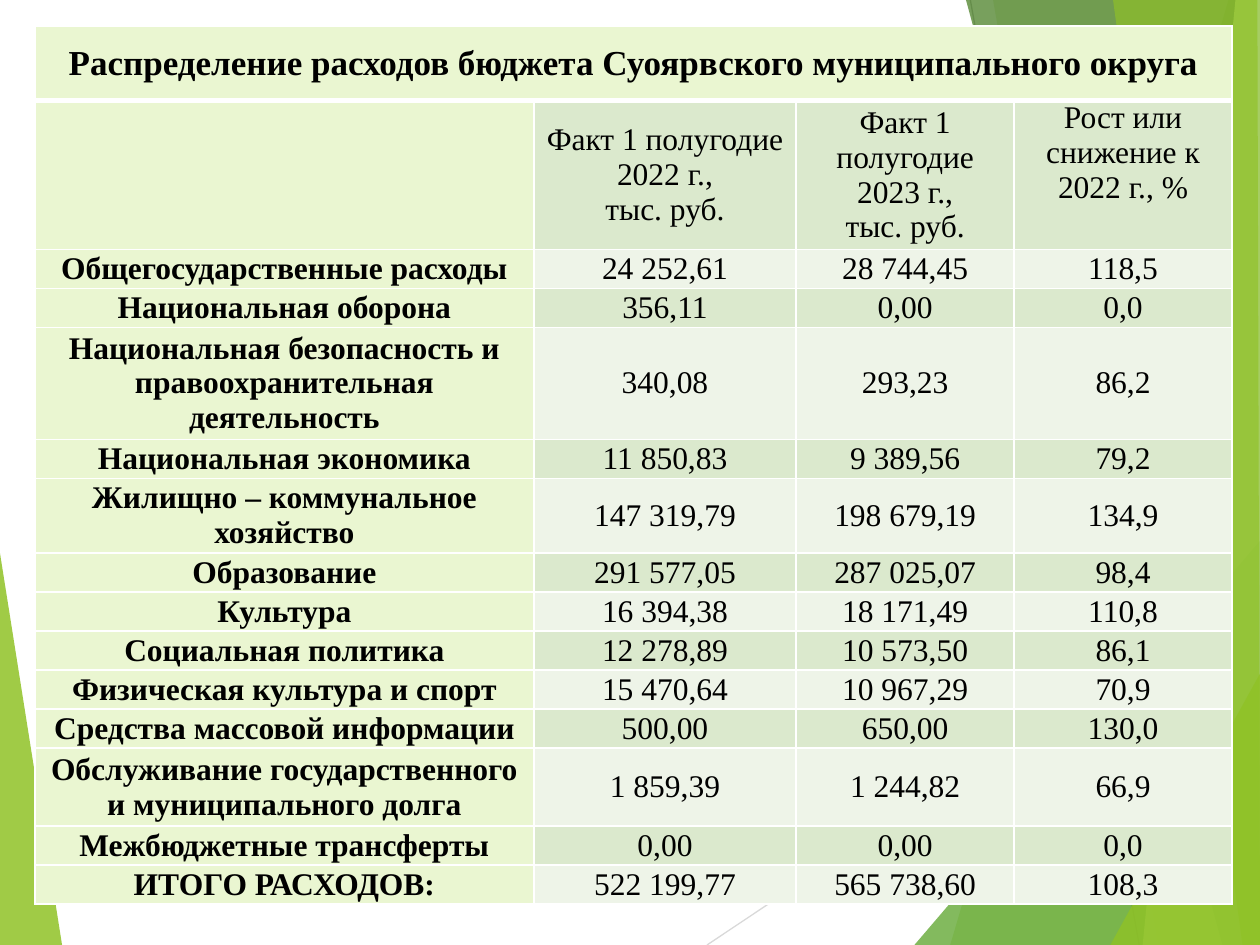
from lxml import etree
from pptx import Presentation
from pptx.dml.color import RGBColor
from pptx.enum.shapes import MSO_CONNECTOR
from pptx.enum.text import MSO_ANCHOR, PP_ALIGN
from pptx.oxml.ns import qn
from pptx.util import Pt

MIDDLE, TOP = MSO_ANCHOR.MIDDLE, MSO_ANCHOR.TOP
CENTER = PP_ALIGN.CENTER
STRAIGHT = MSO_CONNECTOR.STRAIGHT

FONT = "Times New Roman"
BLACK = RGBColor(0x00, 0x00, 0x00)
WHITE = RGBColor(0xFF, 0xFF, 0xFF)
LIME = RGBColor(0x90, 0xC2, 0x26)
GREEN = RGBColor(0x54, 0xA0, 0x21)
DARK_GREEN = RGBColor(0x3F, 0x78, 0x19)
PALE_LIME = RGBColor(0xC0, 0xE4, 0x74)
LIGHT_GRAY = RGBColor(0xD9, 0xD9, 0xD9)
GRAY = RGBColor(0xBF, 0xBF, 0xBF)
LABEL_FILL = RGBColor(0xEA, 0xF6, 0xD1)
BAND_FILLS = (RGBColor(0xDB, 0xE9, 0xCD), RGBColor(0xEE, 0xF4, 0xE8))

WIDTH, HEIGHT = 720, 540

TITLE = "Распределение расходов бюджета Суоярвского муниципального округа"
HEADER = ("", "Факт 1 полугодие 2022 г.,\nтыс. руб.",
          "Факт 1 полугодие 2023 г.,\nтыс. руб.", "Рост или снижение к 2022 г., %")
EXPENSES = [
    ("Общегосударственные расходы", "24 252,61", "28 744,45", "118,5"),
    ("Национальная оборона", "356,11", "0,00", "0,0"),
    ("Национальная безопасность и правоохранительная деятельность",
     "340,08", "293,23", "86,2"),
    ("Национальная экономика", "11 850,83", "9 389,56", "79,2"),
    ("Жилищно – коммунальное хозяйство", "147 319,79", "198 679,19", "134,9"),
    ("Образование", "291 577,05", "287 025,07", "98,4"),
    ("Культура", "16 394,38", "18 171,49", "110,8"),
    ("Социальная политика", "12 278,89", "10 573,50", "86,1"),
    ("Физическая культура и спорт", "15 470,64", "10 967,29", "70,9"),
    ("Средства массовой информации", "500,00", "650,00", "130,0"),
    ("Обслуживание государственного и муниципального долга",
     "1 859,39", "1 244,82", "66,9"),
    ("Межбюджетные трансферты", "0,00", "0,00", "0,0"),
    ("ИТОГО РАСХОДОВ:", "522 199,77", "565 738,60", "108,3"),
]
TABLE_LEFT, TABLE_TOP = 20, 15
COLUMN_WIDTHS = (285, 150, 124.5, 124.5)
TITLE_HEIGHT, HEADER_HEIGHT, LINE_HEIGHT = 42.5, 85, 22.3
TALL_ROWS = {2: 64, 4: 42.8, 10: 44.6}  # expense index: height

# Background, back to front: (start, end, colour) and (corners, colour, opacity %)
LINES = [
    ((404, HEIGHT), (WIDTH, 329), LIGHT_GRAY),
    ((554.5, 0), (651, HEIGHT), GRAY),
]
LEFT_FACET = ([(0, 316), (35.5, HEIGHT), (0, HEIGHT)], LIME, 85)
RIGHT_FACETS = [
    ([(702, 0), (543, HEIGHT), (WIDTH, HEIGHT), (WIDTH, 0)], LIME, 30),
    ([(567.5, 0), (662, HEIGHT), (WIDTH, HEIGHT), (WIDTH, 0)], LIME, 20),
    ([(522.5, HEIGHT), (WIDTH, 309), (WIDTH, HEIGHT)], GREEN, 72),
    ([(552, 0), (698.5, HEIGHT), (WIDTH, HEIGHT), (WIDTH, 0)], DARK_GREEN, 70),
    ([(706, 0), (653, HEIGHT), (WIDTH, HEIGHT), (WIDTH, 0)], PALE_LIME, 70),
    ([(636, 0), (710, HEIGHT), (WIDTH, HEIGHT), (718.5, 0)], LIME, 65),
    ([(634.5, HEIGHT), (WIDTH, 385), (WIDTH, HEIGHT)], LIME, 80),
]


def add_facet(slide, corners, color, opacity):
    points = [(Pt(x), Pt(y)) for x, y in corners]
    builder = slide.shapes.build_freeform(*points[0], scale=1.0)
    builder.add_line_segments(points[1:], close=True)
    facet = builder.convert_to_shape()
    facet.shadow.inherit = False
    facet.line.fill.background()
    facet.fill.solid()
    facet.fill.fore_color.rgb = color
    srgb = facet.fill._xPr.find(qn("a:solidFill"))[0]
    etree.SubElement(srgb, qn("a:alpha"), val=str(opacity * 1000))


def add_line(slide, start, end, color):
    line = slide.shapes.add_connector(STRAIGHT, *map(Pt, start + end))
    line.line.color.rgb = color
    line.line.width = Pt(0.75)
    etree.SubElement(line._element.spPr, qn("a:effectLst"))


def set_borders(cell, top=1, bottom=1):
    """Draw white borders; call before the fill, which must follow them in the XML."""
    properties = cell._tc.get_or_add_tcPr()
    for side, width in (("L", 1), ("R", 1), ("T", top), ("B", bottom)):
        border = etree.SubElement(properties, qn("a:ln" + side), w=str(Pt(width)))
        fill = etree.SubElement(border, qn("a:solidFill"))
        etree.SubElement(fill, qn("a:srgbClr"), val=str(WHITE))


def write_cell(cell, text, fill, size=18, bold=False, anchor=MIDDLE):
    cell.fill.solid()
    cell.fill.fore_color.rgb = fill
    cell.margin_left = cell.margin_right = Pt(5)
    cell.margin_top = cell.margin_bottom = 0
    cell.vertical_anchor = anchor
    cell.text = text
    for paragraph in cell.text_frame.paragraphs:
        paragraph.alignment = CENTER
        font = paragraph.font
        font.size = Pt(size)
        for run in paragraph.runs:
            run.font.name, run.font.size, run.font.bold = FONT, Pt(size), bold
            run.font.color.rgb = BLACK


def add_budget_table(slide):
    rows = [(TITLE, "", "", ""), HEADER] + EXPENSES
    heights = [TITLE_HEIGHT, HEADER_HEIGHT]
    heights += [TALL_ROWS.get(i, LINE_HEIGHT) for i in range(len(EXPENSES))]
    table = slide.shapes.add_table(
        len(rows), len(COLUMN_WIDTHS), Pt(TABLE_LEFT), Pt(TABLE_TOP),
        Pt(sum(COLUMN_WIDTHS)), Pt(sum(heights))).table
    for column, width in zip(table.columns, COLUMN_WIDTHS):
        column.width = Pt(width)
    for row, height in zip(table.rows, heights):
        row.height = Pt(height)
    table.cell(0, 0).merge(table.cell(0, len(COLUMN_WIDTHS) - 1))

    for r, texts in enumerate(rows):
        for c, text in enumerate(texts):
            cell = table.cell(r, c)
            set_borders(cell, top=3 if r == 1 else 1, bottom=3 if r == 0 else 1)
            is_label = r == 0 or c == 0
            write_cell(cell, text,
                       fill=LABEL_FILL if is_label else BAND_FILLS[(r - 1) % 2],
                       size=20 if r == 0 else 18, bold=is_label,
                       anchor=TOP if (r, c) == (1, 3) else MIDDLE)


def main():
    presentation = Presentation()
    presentation.slide_width, presentation.slide_height = Pt(WIDTH), Pt(HEIGHT)
    slide = presentation.slides.add_slide(presentation.slide_layouts[6])
    add_facet(slide, *LEFT_FACET)
    for line in LINES:
        add_line(slide, *line)
    for facet in RIGHT_FACETS:
        add_facet(slide, *facet)
    add_budget_table(slide)
    presentation.save("out.pptx")


if __name__ == "__main__":
    main()
